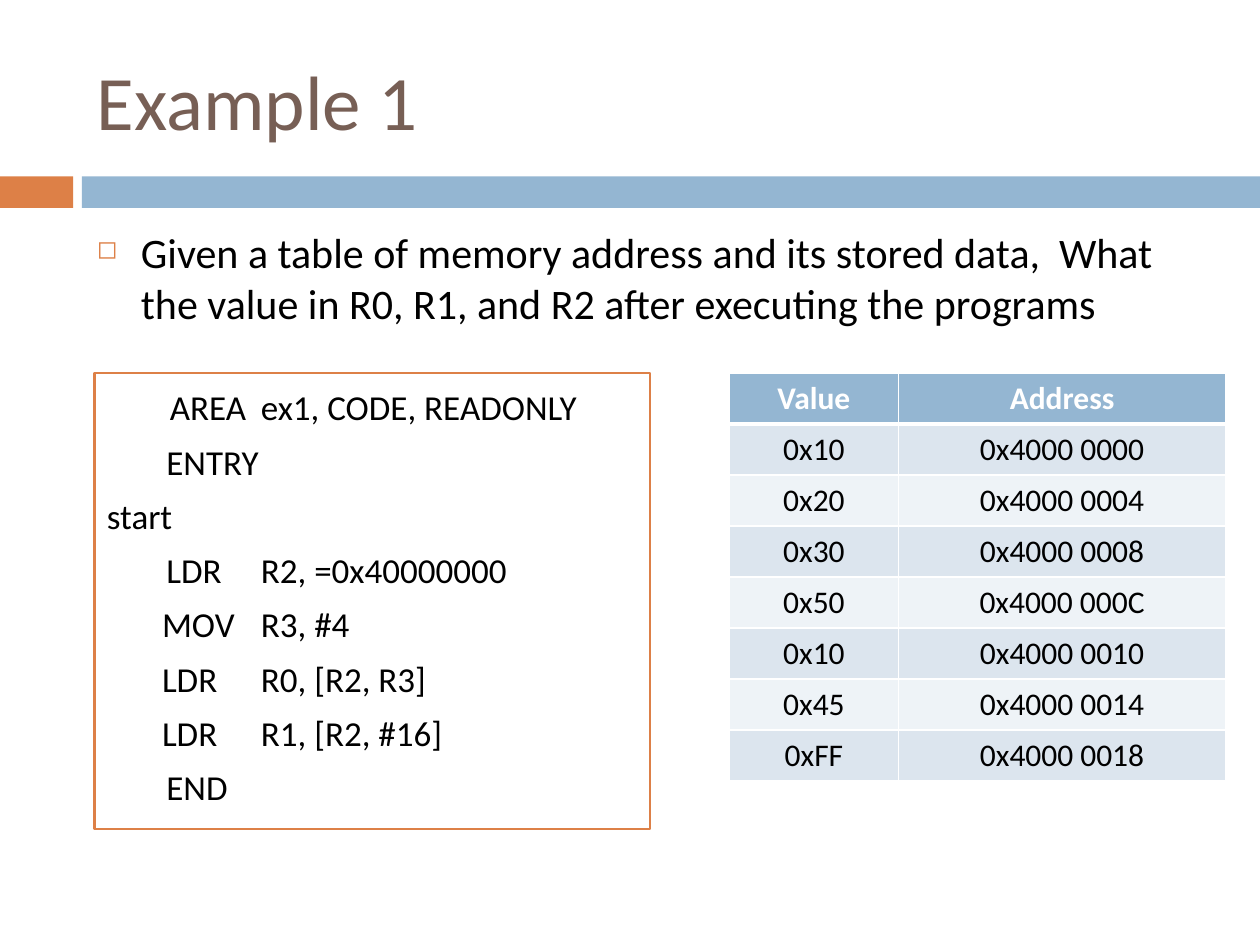
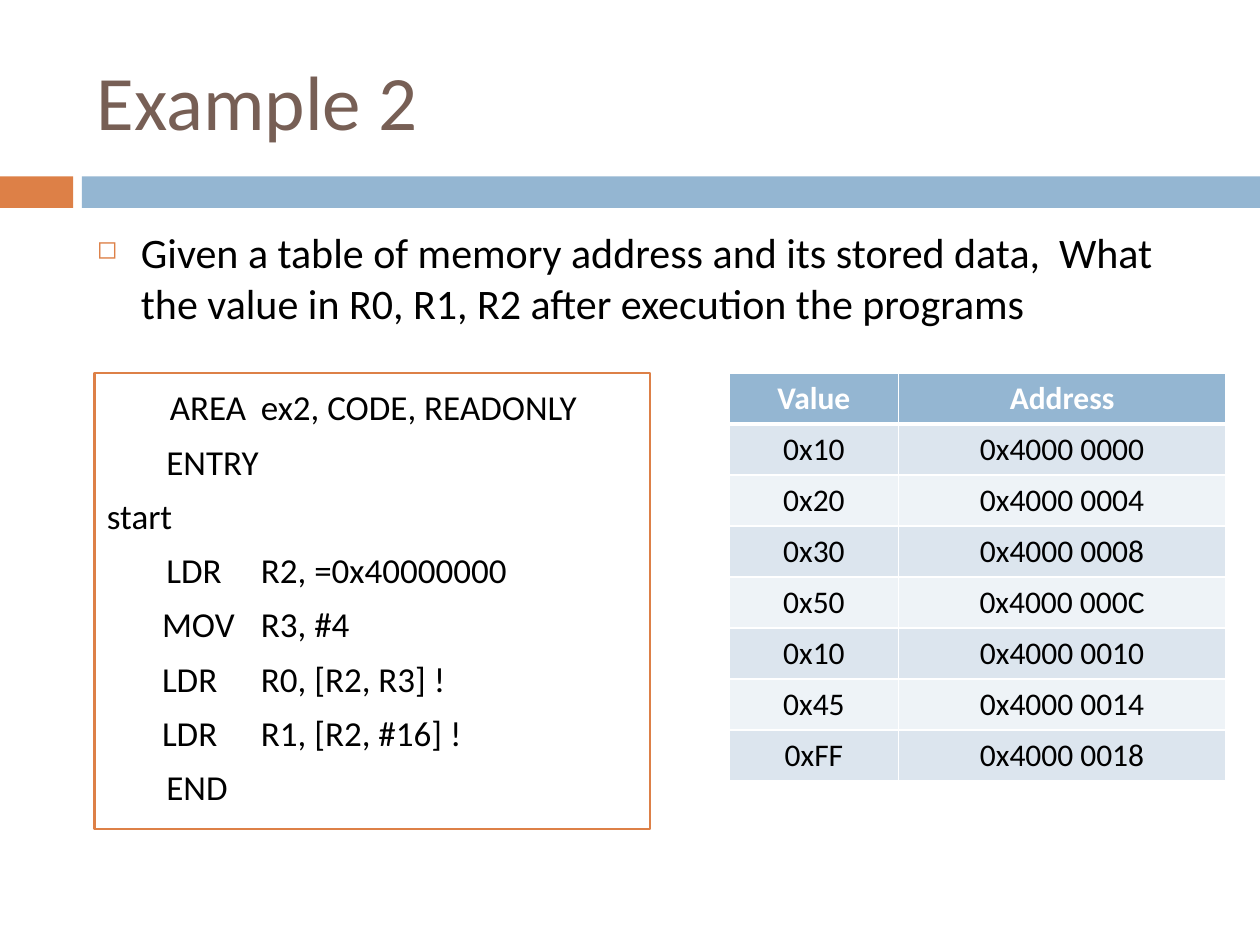
from lxml import etree
from pptx import Presentation
from pptx import util as u
from pptx.dml.color import RGBColor
from pptx.enum import shapes, text
from pptx.oxml import ns

Pt = u.Pt
FONT = "Calibri"
ORANGE, BLUE, BROWN = "DD8047", "94B6D2", "775F55"
BLACK, WHITE = "000000", "FFFFFF"
STRIPES = ("DCE5EE", "EEF3F7")

# Boxes: left, top, width, height
TITLE = (48.24, 18, 642.24, 77.76)
BODY = (48.24, 126, 642.24, 354.24)
CODE = (54, 213.12, 317.52, 260.64)
TABLE = (416.88, 213.12, 283.68, 233.28)
BANDS = (((0, 100.8, 41.76, 18), ORANGE), ((46.8, 100.8, 673.2, 18), BLUE))

MEMORY = ["0x10", "0x20", "0x30", "0x50", "0x10", "0x45", "0xFF"]
OPERAND = 88  # where the operands of the listing start


def paint(target, color):
    """Set a fill or a font to one colour."""
    if hasattr(target, "solid"):
        target.solid()
        target = target.fore_color
    else:
        target = target.color
    target.rgb = RGBColor.from_string(color)


def style(para, size, color=BLACK, bold=False):
    for run in para.runs:
        run.font.name, run.font.size, run.font.bold = FONT, Pt(size), bold
        paint(run.font, color)


def indent(para, left, first):
    props = para._p.get_or_add_pPr()
    props.set("marL", str(Pt(left)))
    props.set("indent", str(Pt(first - left)))
    return props


def sub(parent, tag, **attrs):
    return etree.SubElement(parent, ns.qn(tag), attrs)


def rect(slide, box, color):
    shape = slide.shapes.add_shape(shapes.MSO_SHAPE.RECTANGLE, *map(Pt, box))
    shape.shadow.inherit = False
    paint(shape.fill, color)
    shape.line.fill.background()
    return shape


def label(slide, box, words, size, color):
    frame = slide.shapes.add_textbox(*map(Pt, box)).text_frame
    frame.word_wrap = True
    frame.text = words
    style(frame.paragraphs[0], size, color)
    return frame


def header(slide, title):
    for box, color in BANDS:
        rect(slide, box, color)
    frame = label(slide, TITLE, title, 44, BROWN)
    frame.vertical_anchor = text.MSO_ANCHOR.MIDDLE


def question(slide, box, words):
    para = label(slide, box, words, 24, BLACK).paragraphs[0]
    props = indent(para, 25.2, 0)
    sub(sub(props, "a:buClr"), "a:srgbClr", val=ORANGE)
    sub(props, "a:buSzPct", val="60000")
    sub(props, "a:buChar", char="◻")


def border(cell, below):
    props = cell._tc.get_or_add_tcPr()
    for side, width in (("L", 1), ("R", 1), ("T", 1), ("B", below)):
        line = sub(props, "a:ln" + side, w=str(Pt(width)))
        sub(sub(line, "a:solidFill"), "a:srgbClr", val=WHITE)


def memory(slide, box):
    rows = [("Value", "Address")]
    rows += [(v, f"0x4000 {4 * i:04X}") for i, v in enumerate(MEMORY)]
    table = slide.shapes.add_table(len(rows), 2, *map(Pt, box)).table
    for col, part in zip(table.columns, (0.34, 0.66)):
        col.width = Pt(round(box[2] * part, 2))
    for r, row in enumerate(rows):
        table.rows[r].height = Pt(box[3] / len(rows))
        head = r == 0
        for c, words in enumerate(row):
            cell = table.cell(r, c)
            cell.text = words
            para = cell.text_frame.paragraphs[0]
            para.alignment = text.PP_ALIGN.CENTER
            style(para, 18, WHITE if head else BLACK, head)
            border(cell, 3 if head else 1)
            paint(cell.fill, BLUE if head else STRIPES[(r - 1) % 2])


def listing(slide, box, lines):
    shape = rect(slide, box, WHITE)
    paint(shape.line.fill, ORANGE)
    shape.line.width = Pt(1.5)
    frame = shape.text_frame
    frame.word_wrap = True
    frame.vertical_anchor = text.MSO_ANCHOR.TOP
    frame.margin_top = Pt(7.4)
    frame.text = "\n".join(words for _, words in lines)
    for para, (first, _) in zip(frame.paragraphs, lines):
        para.alignment = text.PP_ALIGN.LEFT
        para.space_before = Pt(7)
        indent(para, OPERAND, first)
        style(para, 20)


def example(deck, num, ask, mark):
    slide = deck.slides.add_slide(deck.slide_layouts[6])
    header(slide, f"Example {num}")
    question(slide, BODY, "Given a table of memory address and its stored "
             f"data,  What the value in {ask} the programs")
    memory(slide, TABLE)
    # Each line: start of its first word, then its words
    listing(slide, CODE, [
        (36, f"AREA\tex{num}, CODE, READONLY"),
        (34, "ENTRY"),
        (0, "start"),
        (34, "LDR\tR2, =0x40000000"),
        (31.5, "MOV\tR3, #4"),
        (31.5, f"LDR\tR0, [R2, R3]{mark}"),
        (31.5, f"LDR\tR1, [R2, #16]{mark}"),
        (34, "END"),
    ])


def main():
    deck = Presentation()
    deck.slide_width, deck.slide_height = Pt(720), Pt(540)
    example(deck, 1, "R0, R1, and R2 after executing", "")
    example(deck, 2, "R0, R1, R2 after execution", " !")
    deck.save("out.pptx")


if __name__ == "__main__":
    main()
